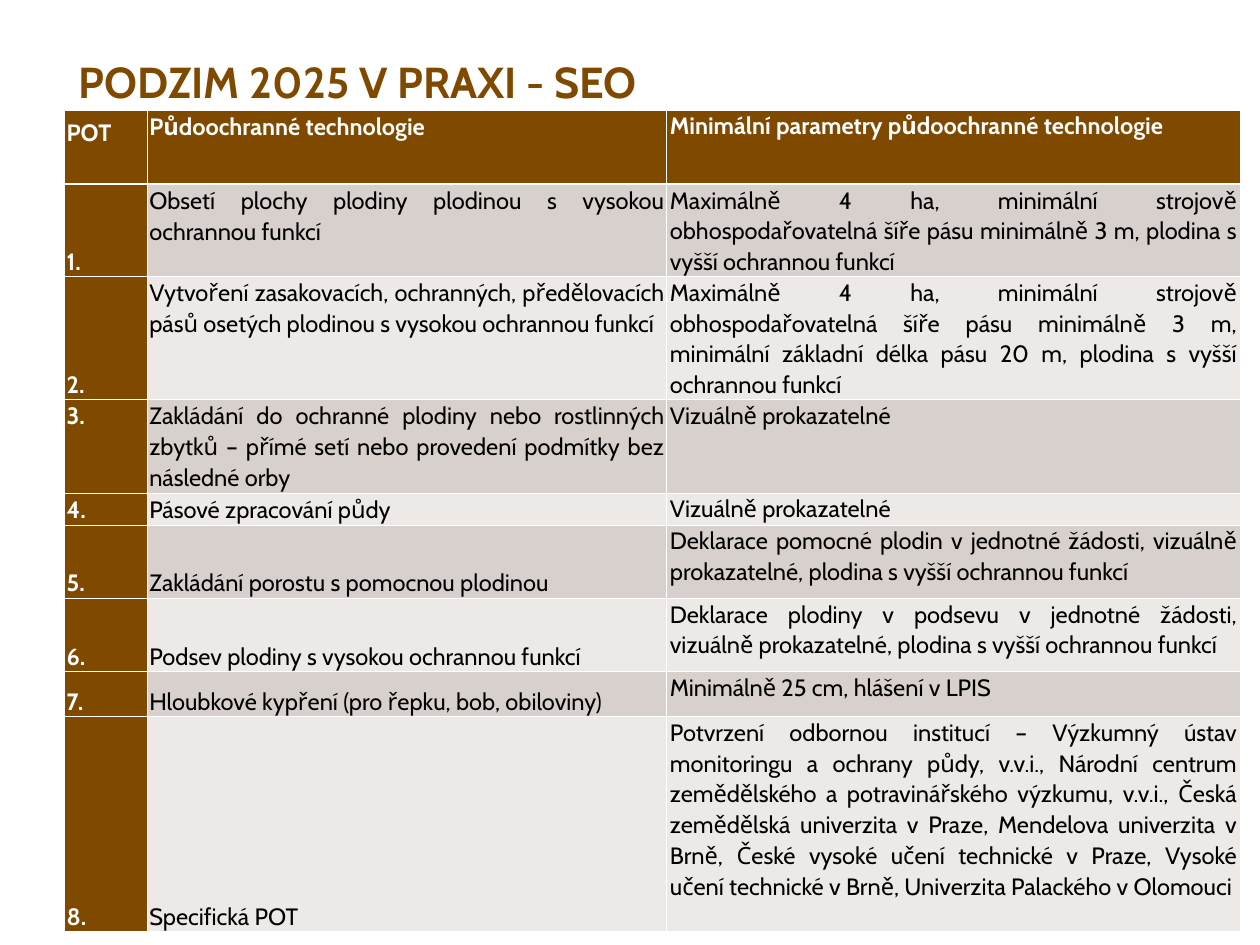
"""Build the slide listing soil protection technologies for autumn 2025."""
from dataclasses import dataclass

from lxml import etree
from pptx import Presentation
from pptx import util as u
from pptx.dml.color import RGBColor
from pptx.enum import text
from pptx.oxml import ns

COLOURS = {
    "brown": "804900",
    "dark_band": "D8D0CC",
    "light_band": "EDE9E7",
    "white": "FFFFFF",
    "black": "000000",
}
FONT = "Cabin"
TOP, BOTTOM = text.MSO_ANCHOR.TOP, text.MSO_ANCHOR.BOTTOM
COLUMN_WIDTHS = (1.75, 11, 12.14)
MARGINS = ((0.05, 0.01), (0.05, 0.01), (0.07, 0))
HEADER_NUMBER_GAP = 0.77


@dataclass(frozen=True)
class Technology:
    """One table row with its height and cell anchors."""
    number: str
    name: str
    parameters: str
    height: float
    number_anchor: text.MSO_ANCHOR = BOTTOM
    name_anchor: text.MSO_ANCHOR = TOP


ROWS = (
    Technology("POT", "Půdoochranné technologie",
               "Minimální parametry půdoochranné technologie", 1.57),
    Technology("1.", "Obsetí plochy plodiny plodinou s vysokou ochrannou funkcí",
               "Maximálně 4 ha, minimální strojově obhospodařovatelná šíře pásu "
               "minimálně 3 m, plodina s vyšší ochrannou funkcí", 1.95),
    Technology("2.", "Vytvoření zasakovacích, ochranných, předělovacích pásů osetých "
               "plodinou s vysokou ochrannou funkcí",
               "Maximálně 4 ha, minimální strojově obhospodařovatelná šíře pásu "
               "minimálně 3 m, minimální základní délka pásu 20 m, plodina s vyšší "
               "ochrannou funkcí", 2.6),
    Technology("3.", "Zakládání do ochranné plodiny nebo rostlinných zbytků – přímé "
               "setí nebo provedení podmítky bez následné orby",
               "Vizuálně prokazatelné", 1.97, TOP),
    Technology("4.", "Pásové zpracování půdy", "Vizuálně prokazatelné", 0.68, TOP),
    Technology("5.", "Zakládání porostu s pomocnou plodinou",
               "Deklarace pomocné plodin v jednotné žádosti, vizuálně prokazatelné, "
               "plodina s vyšší ochrannou funkcí", 1.55, name_anchor=BOTTOM),
    Technology("6.", "Podsev plodiny s vysokou ochrannou funkcí",
               "Deklarace plodiny v podsevu v jednotné žádosti, vizuálně prokazatelné, "
               "plodina s vyšší ochrannou funkcí", 1.55, name_anchor=BOTTOM),
    Technology("7.", "Hloubkové kypření (pro řepku, bob, obiloviny)",
               "Minimálně 25 cm, hlášení v LPIS", 0.95, name_anchor=BOTTOM),
    Technology("8.", "Specifická POT",
               "Potvrzení odbornou institucí – Výzkumný ústav monitoringu a ochrany "
               "půdy, v.v.i., Národní centrum zemědělského a potravinářského výzkumu, "
               "v.v.i., Česká zemědělská univerzita v Praze, Mendelova univerzita "
               "v Brně, České vysoké učení technické v Praze, Vysoké učení technické "
               "v Brně, Univerzita Palackého v Olomouci", 4.55, name_anchor=BOTTOM),
)


def colour(name: str) -> RGBColor:
    """Look up a named colour."""
    return RGBColor.from_string(COLOURS[name])


def style_runs(para, size: float, colour_name: str, bold: bool) -> None:
    """Format every run of a paragraph."""
    for span in para.runs:
        span.font.name = FONT
        span.font.size = u.Pt(size)
        span.font.bold = bold
        span.font.color.rgb = colour(colour_name)


def add_borders(cell, bottom_width: float) -> None:
    """Put white lines around a cell, ahead of its fill."""
    properties = cell._tc.get_or_add_tcPr()
    widths = {"lnL": 1, "lnR": 1, "lnT": 1, "lnB": bottom_width}
    for position, (tag, width) in enumerate(widths.items()):
        line = etree.Element(ns.qn(f"a:{tag}"), w=str(u.Pt(width)))
        fill = etree.SubElement(line, ns.qn("a:solidFill"))
        etree.SubElement(fill, ns.qn("a:srgbClr"), val=COLOURS["white"])
        properties.insert(position, line)


def fill_cell(cell, words: str, column: int, row: int, anchor: text.MSO_ANCHOR) -> None:
    """Write and format one table cell."""
    strong = row == 0 or column == 0
    band = "dark_band" if row % 2 else "light_band"
    side, edge = MARGINS[column]
    cell.margin_left = cell.margin_right = u.Inches(side)
    cell.margin_top = cell.margin_bottom = u.Inches(edge)
    cell.vertical_anchor = anchor
    cell.fill.solid()
    cell.fill.fore_color.rgb = colour("brown" if strong else band)
    cell.text_frame.text = words
    para = cell.text_frame.paragraphs[0]
    para.alignment = text.PP_ALIGN.JUSTIFY
    para.line_spacing = 1.07
    para.space_after = u.Pt(8)
    style_runs(para, 36, "white" if strong else "black", strong)
    add_borders(cell, 1 if row else 3)


def add_title(page) -> None:
    """Place and format the title."""
    box = page.shapes.title
    box.left, box.top = u.Inches(1.67), u.Inches(1.29)
    box.width, box.height = u.Inches(23.34), u.Inches(1.61)
    frame = box.text_frame
    frame.text = "PODZIM 2025 V PRAXI - SEO"
    frame.margin_left = frame.margin_right = frame.margin_top = frame.margin_bottom = 0
    frame.vertical_anchor = TOP
    frame.auto_size = text.MSO_AUTO_SIZE.NONE
    para = frame.paragraphs[0]
    para.alignment = text.PP_ALIGN.LEFT
    para.line_spacing = 0.9
    style_runs(para, 66, "brown", True)


def add_technology_table(page) -> None:
    """Draw the table of technologies."""
    table = page.shapes.add_table(
        len(ROWS), len(COLUMN_WIDTHS), u.Inches(1.36), u.Inches(2.33),
        u.Inches(sum(COLUMN_WIDTHS)), u.Inches(sum(row.height for row in ROWS))).table
    for column, width in zip(table.columns, COLUMN_WIDTHS):
        column.width = u.Inches(width)
    for index, row in enumerate(ROWS):
        table.rows[index].height = u.Inches(row.height)
        name_anchors = (row.number_anchor, row.name_anchor, TOP)
        words = (row.number, row.name, row.parameters)
        for column, (content, anchor) in enumerate(zip(words, name_anchors)):
            fill_cell(table.cell(index, column), content, column, index, anchor)
    table.cell(0, 0).margin_bottom = u.Inches(HEADER_NUMBER_GAP)


def main() -> None:
    """Create and save the deck."""
    deck = Presentation()
    deck.slide_width, deck.slide_height = u.Inches(26.67), u.Inches(20)
    page = deck.slides.add_slide(deck.slide_layouts[5])
    add_title(page)
    add_technology_table(page)
    deck.save("out.pptx")


if __name__ == "__main__":
    main()
